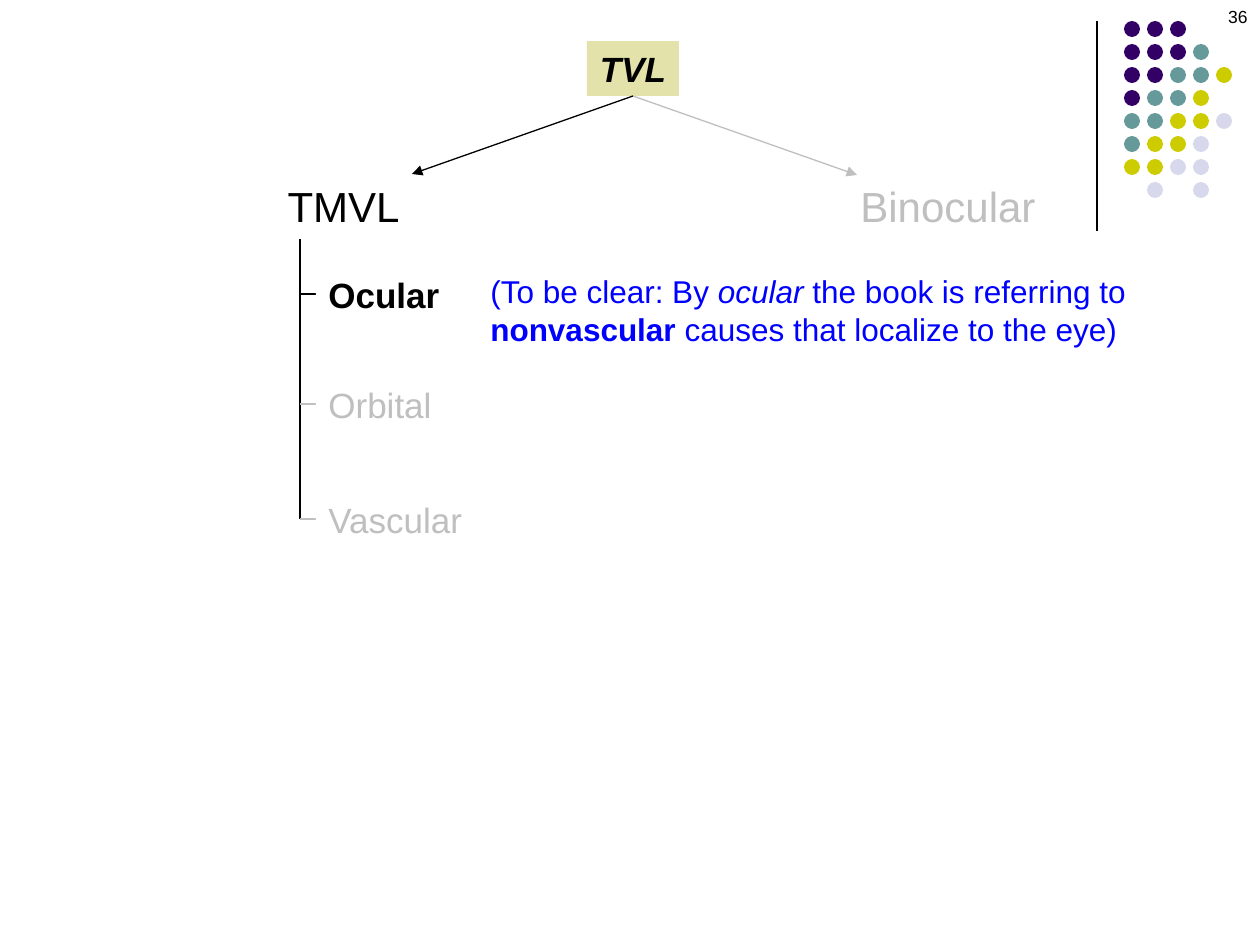
from lxml import etree
from pptx import Presentation
from pptx import util as u
from pptx.dml.color import RGBColor
from pptx.enum import shapes, text
from pptx.oxml import ns

PX = 914400 / 126
COLORS = {
    "black": "000000", "muted": "BFBFBF", "note": "0000FF",
    "white": "FFFFFF", "root": "E2E2AA",
    "P": "330066", "T": "669999", "Y": "CCCC00", "L": "D8D8EC",
}
DOT_ROWS = ["PPP", "PPPT", "PPTTY", "PTTY", "TTYYL", "TYYL", "YYLL", " L L"]
DOT_PITCH, DOT_SIZE = 23, 16
TRUNK_X = 300


def px(*values):
    return [u.Emu(round(v * PX)) for v in values]


def rgb(name):
    return RGBColor.from_string(COLORS[name])


def add_line(s, start, end, color="black", arrow=False):
    cx = s.shapes.add_connector(shapes.MSO_CONNECTOR.STRAIGHT, *px(*start, *end))
    cx.line.color.rgb = rgb(color)
    cx.line.width = u.Pt(0.75)
    if arrow:
        ln = cx.line._get_or_add_ln()
        etree.SubElement(ln, ns.qn("a:tailEnd"), type="triangle")
    etree.SubElement(cx._element.spPr, ns.qn("a:effectLst"))


def add_text(s, box, runs, size, color="black", fill=None, wrap=False, grow=True,
             align=text.PP_ALIGN.LEFT):
    """Add a text box; runs is a list of (wording, font format dict)."""
    sp = s.shapes.add_textbox(*px(*box))
    if fill:
        sp.fill.solid()
        sp.fill.fore_color.rgb = rgb(fill)
    tf = sp.text_frame
    tf.word_wrap = wrap
    tf.auto_size = (text.MSO_AUTO_SIZE.SHAPE_TO_FIT_TEXT if grow
                    else text.MSO_AUTO_SIZE.NONE)
    p = tf.paragraphs[0]
    p.alignment = align
    for wording, extra in runs:
        r = p.add_run()
        r.text = wording
        r.font.color.rgb = rgb(color)
        for name, value in {"name": "Arial", "size": u.Pt(size), **extra}.items():
            setattr(r.font, name, value)


def add_dots(s, left, top):
    for row, codes in enumerate(DOT_ROWS):
        for col, code in enumerate(codes):
            if code == " ":
                continue
            dot = s.shapes.add_shape(
                shapes.MSO_SHAPE.OVAL,
                *px(left + col * DOT_PITCH, top + row * DOT_PITCH, DOT_SIZE, DOT_SIZE))
            dot.shadow.inherit = False
            dot.fill.solid()
            dot.fill.fore_color.rgb = rgb(code)
            dot.line.fill.background()


def add_branch(s, y, width, label, color="muted", **fmt):
    """Add a tick off the trunk at height y, with its label."""
    add_line(s, (TRUNK_X, y), (TRUNK_X + 29, y), color)
    add_text(s, (TRUNK_X + 16, y - 27, width, 55), [(label, fmt)], 20, color, "white")


def main():
    prs = Presentation()
    prs.slide_width, prs.slide_height = px(1260, 945)
    s = prs.slides.add_slide(prs.slide_layouts[6])

    add_line(s, (1097, 21), (1097, 231))
    add_dots(s, 1124, 21)
    add_text(s, (966, 0, 294, 63), [("36", {})], 10, wrap=True, grow=False,
             align=text.PP_ALIGN.RIGHT)

    root = (633, 96)
    add_text(s, (587, 41, 92, 55), [("TVL", {"bold": True, "italic": True})], 20,
             fill="root", align=text.PP_ALIGN.CENTER)
    add_line(s, root, (412, 174), arrow=True)
    add_line(s, root, (857, 175), "muted", arrow=True)
    add_text(s, (273, 174, 139, 63), [("TMVL", {})], 24, align=text.PP_ALIGN.RIGHT)
    add_text(s, (848, 174, 203, 63), [("Binocular", {})], 24, "muted")

    add_line(s, (TRUNK_X, 239), (TRUNK_X, 519))
    add_branch(s, 294, 137, "Ocular", "black", bold=True)
    add_branch(s, 404, 130, "Orbital")
    add_branch(s, 519, 160, "Vascular")

    note = [("(To be clear: By ", {}), ("ocular", {"italic": True}),
            (" the book is referring to ", {}), ("nonvascular", {"bold": True}),
            (" causes that localize to the eye)", {})]
    add_text(s, (478, 266, 678, 89), note, 18, "note", wrap=True)

    prs.save("out.pptx")


if __name__ == "__main__":
    main()
